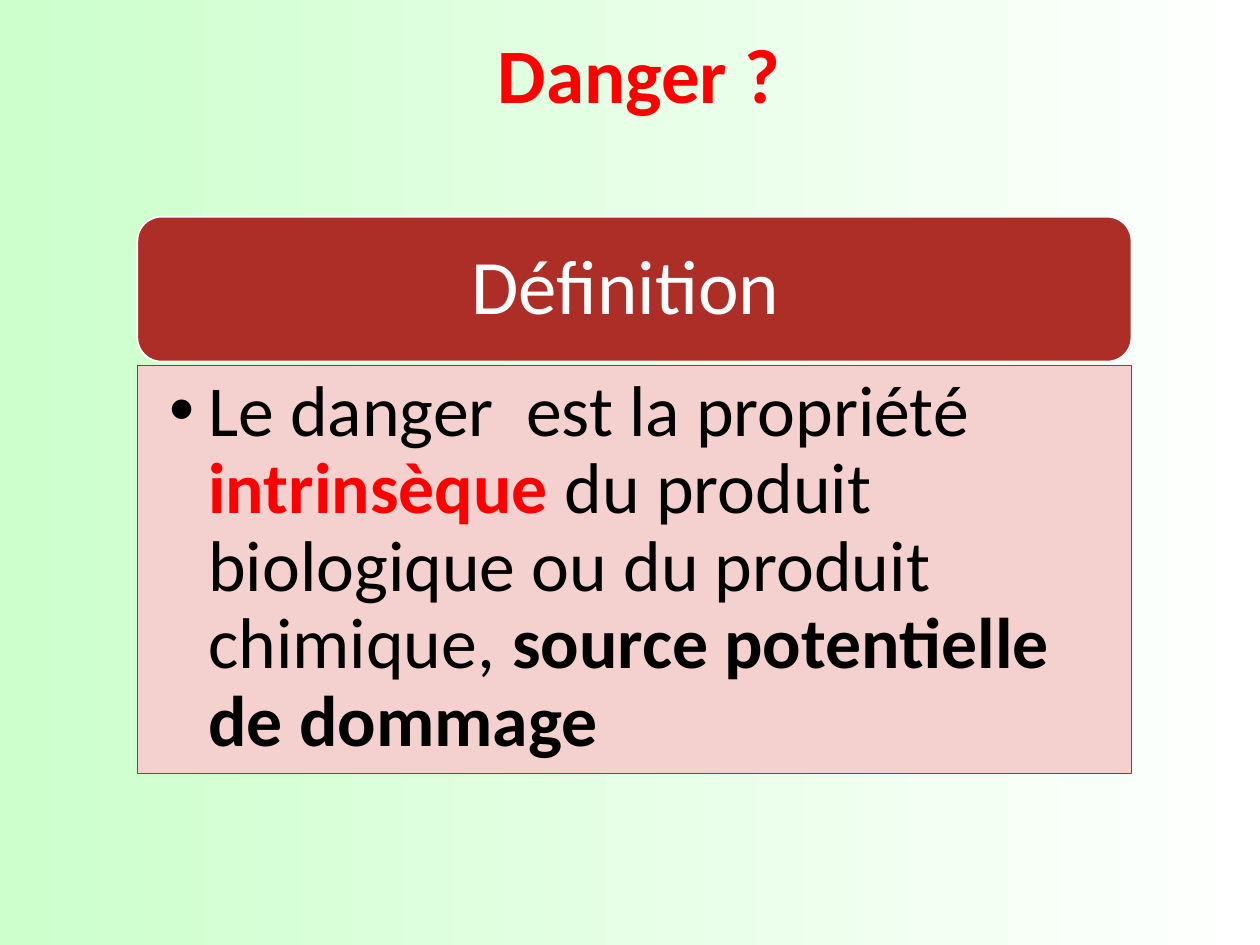
from lxml import etree
from pptx import Presentation
from pptx.dml.color import RGBColor
from pptx.enum.shapes import MSO_SHAPE
from pptx.enum.text import MSO_ANCHOR, PP_ALIGN
from pptx.oxml.ns import qn
from pptx.util import Cm, Pt

ROUNDED = MSO_SHAPE.ROUNDED_RECTANGLE
RECTANGLE = MSO_SHAPE.RECTANGLE
TOP, MIDDLE, BOTTOM = MSO_ANCHOR.TOP, MSO_ANCHOR.MIDDLE, MSO_ANCHOR.BOTTOM
LEFT, CENTER = PP_ALIGN.LEFT, PP_ALIGN.CENTER

FONT = "Calibri"
COLORS = {
    "mint": "CCFFCC",
    "white": "FFFFFF",
    "black": "000000",
    "red": "FF0000",
    "brick": "AD2E27",
    "rose": "F4D0CE",
}


def color(name):
    return RGBColor.from_string(COLORS[name])


def paint_background(slide):
    fill = slide.background.fill
    fill.gradient()
    fill.gradient_angle = 0
    for stop, name, position in zip(fill.gradient_stops, ("mint", "white"), (0, 1)):
        stop.color.rgb = color(name)
        stop.position = position


def write_paragraph(shape, runs, size, anchor, alignment, insets):
    """Fill the shape with one paragraph; runs are (text, color name, bold)."""
    frame = shape.text_frame
    frame.word_wrap = True
    frame.vertical_anchor = anchor
    frame.margin_left, frame.margin_top, frame.margin_right, frame.margin_bottom = (
        Cm(inset) for inset in insets
    )
    paragraph = frame.paragraphs[0]
    paragraph.alignment = alignment
    paragraph.line_spacing = 0.9
    paragraph.font.name = FONT
    paragraph.font.size = Pt(size)
    for text, name, bold in runs:
        run = paragraph.add_run()
        run.text = text
        run.font.name = FONT
        run.font.size = Pt(size)
        run.font.bold = bold
        run.font.color.rgb = color(name)
    return paragraph


def add_bullet(paragraph, indent):
    properties = paragraph._p.get_or_add_pPr()
    properties.set("marL", str(Cm(indent)))
    properties.set("indent", str(-Cm(indent)))
    etree.SubElement(properties, qn("a:buFont"), typeface="Arial")
    etree.SubElement(properties, qn("a:buChar"), char="•")


def add_panel(slide, kind, box, fill, line, line_width):
    shape = slide.shapes.add_shape(kind, *(Cm(length) for length in box))
    shape.shadow.inherit = False
    shape.fill.solid()
    shape.fill.fore_color.rgb = color(fill)
    shape.line.color.rgb = color(line)
    shape.line.width = Pt(line_width)
    return shape


def add_title(slide, box):
    title = slide.shapes.add_textbox(*(Cm(length) for length in box))
    write_paragraph(title, [(" Danger ?", "red", True)], 44, BOTTOM, CENTER,
                    (0.25, 0.13, 0.25, 0.13))


def add_definition(slide, left, top, width, height):
    header_height, gap = 2.92, 0.08
    body_top = header_height + gap

    # Header bar
    header = add_panel(slide, ROUNDED, (left, top, width, header_height),
                       "brick", "white", 1)
    write_paragraph(header, [("Définition ", "white", False)], 44, MIDDLE, CENTER,
                    (0.46, 0.46, 0.46, 0.46))

    # Definition text
    body = add_panel(slide, RECTANGLE, (left, top + body_top, width, height - body_top),
                     "rose", "brick", 0.75)
    runs = [
        ("Le danger  est la propriété ", "black", False),
        ("intrinsèque", "red", True),
        (" du produit biologique ou du produit chimique, ", "black", False),
        ("source potentielle de dommage", "black", True),
    ]
    paragraph = write_paragraph(body, runs, 41, TOP, LEFT, (0.64, 0.18, 1.04, 0.18))
    add_bullet(paragraph, 0.79)


def main():
    presentation = Presentation()
    presentation.slide_width, presentation.slide_height = Cm(25.4), Cm(19.05)
    slide = presentation.slides.add_slide(presentation.slide_layouts[6])
    paint_background(slide)
    add_title(slide, (3.58, 0.58, 18.26, 1.98))
    add_definition(slide, 2.77, 4.37, 20.04, 11.23)
    presentation.save("out.pptx")


if __name__ == "__main__":
    main()
